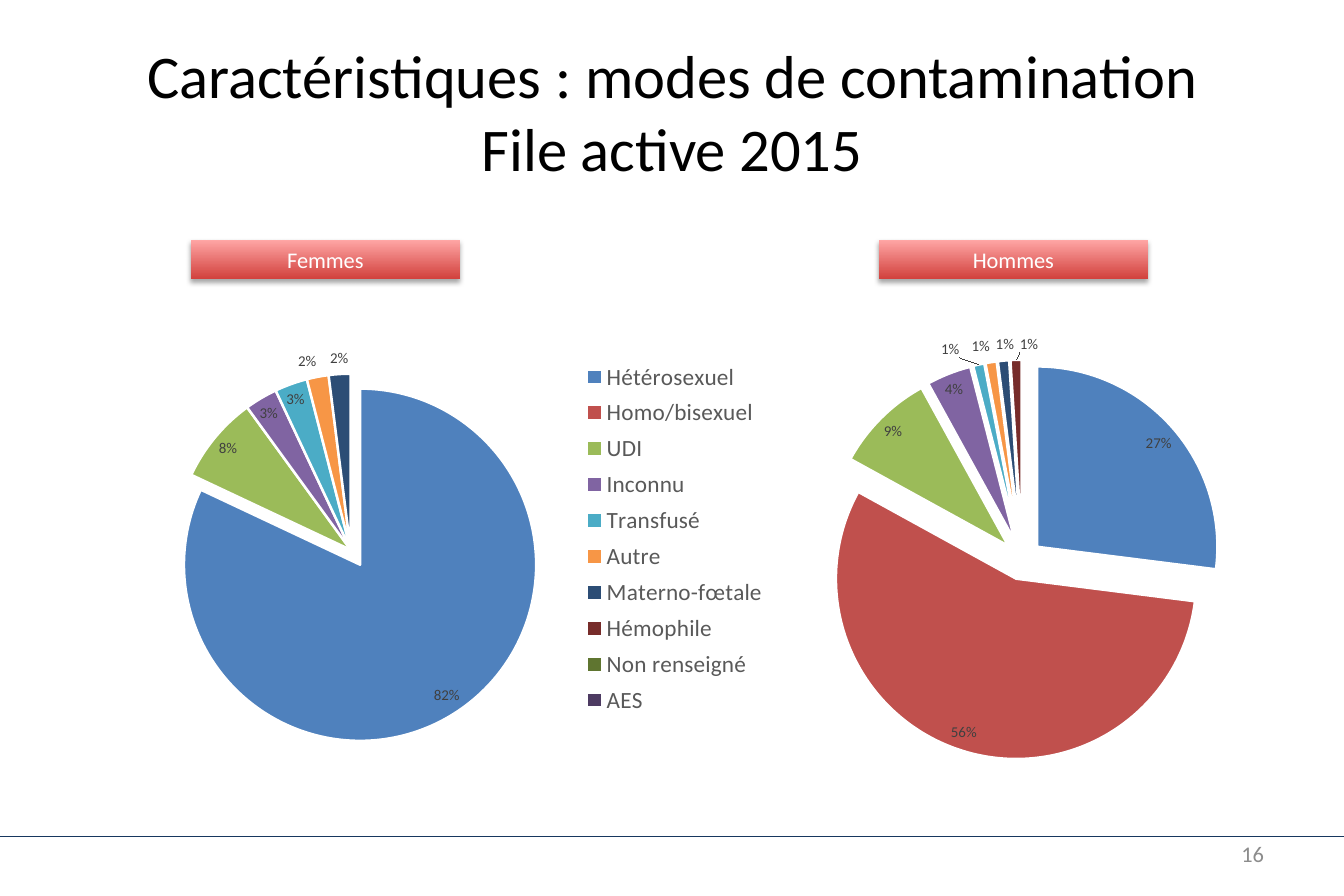
from lxml import etree
from pptx import Presentation
from pptx.chart.data import CategoryChartData
from pptx.dml.color import RGBColor
from pptx.enum.chart import XL_CHART_TYPE as ChartType, XL_LABEL_POSITION as LabelPos, XL_LEGEND_POSITION as LegendPos
from pptx.enum.shapes import MSO_CONNECTOR as Connector, MSO_SHAPE as Shape
from pptx.enum.text import MSO_ANCHOR as Anchor, PP_ALIGN as Align
from pptx.oxml import parse_xml
from pptx.oxml.ns import nsdecls, qn
from pptx.util import Cm, Pt

TITLE = ["Caractéristiques : modes de contamination", "File active 2015"]
PAGE = "16"
MODES = ["Hétérosexuel", "Homo/bisexuel", "UDI", "Inconnu", "Transfusé",
         "Autre", "Materno-fœtale", "Hémophile", "Non renseigné", "AES"]
RANKS = [str(n + 1) for n in range(len(MODES))]
WOMEN = [82, 0, 8, 3, 3, 2, 2, 0, 0, 0]
MEN = [27, 56, 9, 4, 1, 1, 1, 1, 0, 0]
WOMEN_EXPLOSION = [10] + [0] * 9
MEN_EXPLOSION = [11] * 10
BANNERS = [("Femmes", 4.06), ("Hommes", 18.69)]
WOMEN_BOX = (1.19, 6.78, 15.67, 9.73)
MEN_BOX = (15.21, 6.78, 13.06, 9.73)
PLOT_AREA = (0.16, 0.12, 0.48, 0.77)
LEGEND_AREA = (0.7, 0.08, 0.28, 0.8)

FONT = "Calibri"
BLACK = RGBColor(0x00, 0x00, 0x00)
WHITE = RGBColor(0xFF, 0xFF, 0xFF)
GREY = RGBColor(0x8C, 0x8C, 0x8C)
LABEL_GREY = RGBColor(0x40, 0x40, 0x40)
LEGEND_GREY = RGBColor(0x59, 0x59, 0x59)
NAVY = RGBColor(0x17, 0x37, 0x5E)
RED = RGBColor(0xD1, 0x40, 0x3C)
PINK = RGBColor(0xFF, 0xA6, 0xA5)
SLICES = [RGBColor.from_string(c) for c in (
    "4F81BD", "C0504D", "9BBB59", "8064A2", "4BACC6",
    "F79646", "2C4D75", "772C2A", "5F7530", "4D3B62")]


def set_font(font, size, color):
    font.name, font.size = FONT, Pt(size)
    font.color.rgb = color


def write(sp, lines, size=13.5, color=BLACK, align=Align.CENTER):
    tf = sp.text_frame
    tf.word_wrap = True
    tf.vertical_anchor = Anchor.MIDDLE
    for i, line in enumerate(lines):
        p = tf.add_paragraph() if i else tf.paragraphs[0]
        p.alignment = align
        r = p.add_run()
        r.text = line
        set_font(r.font, size, color)


def add_banner(s, text, left):
    sp = s.shapes.add_shape(Shape.RECTANGLE, Cm(left), Cm(5.1), Cm(5.72), Cm(0.84))
    sp.line.fill.background()
    sp.fill.gradient()
    sp.fill.gradient_angle = 90
    for stop, color in zip(sp.fill.gradient_stops, (RED, PINK)):
        stop.color.rgb = color
    sp.shadow.inherit = False
    effects = sp._element.spPr.find(qn("a:effectLst"))
    effects.append(parse_xml(
        f'<a:outerShdw {nsdecls("a")} blurRad="{Pt(3.1)}" dist="{Pt(1.8)}" dir="5400000" rotWithShape="0">'
        '<a:srgbClr val="000000"><a:alpha val="35000"/></a:srgbClr></a:outerShdw>'))
    write(sp, [text], color=WHITE)


def manual_layout(area, target=""):
    modes = "".join(f'<c:{m}Mode val="edge"/>' for m in "xy")
    sizes = "".join(f'<c:{k} val="{v}"/>' for k, v in zip("xywh", area))
    return parse_xml(f'<c:layout {nsdecls("c")}><c:manualLayout>{target}{modes}{sizes}'
                     '</c:manualLayout></c:layout>')


def add_pie(s, box, names, values, explosion):
    data = CategoryChartData()
    data.categories = names
    data.add_series("Series 1", values)
    chart = s.shapes.add_chart(ChartType.PIE, *map(Cm, box), data).chart
    chart.has_title = chart.has_legend = False
    set_font(chart.font, 10, BLACK)
    plot = chart.plots[0]
    plot.vary_by_categories = True
    series = plot.series[0]
    for i, color in enumerate(SLICES):
        fmt = series.points[i].format
        fmt.fill.solid()
        fmt.fill.fore_color.rgb = color
        fmt.line.color.rgb = WHITE
        fmt.line.width = Pt(1.5)
    for point, amount in zip(series._element.findall(qn("c:dPt")), explosion):
        if amount:
            node = etree.Element(qn("c:explosion"), val=str(amount))
            point.find(qn("c:spPr")).addprevious(node)
    labels = series.data_labels
    labels.show_percentage, labels.show_value = True, False
    labels.number_format, labels.number_format_is_linked = "0%", False
    labels.position = LabelPos.BEST_FIT
    set_font(labels.font, 9, LABEL_GREY)
    return chart


def arrange_women(chart):
    chart.has_legend = True
    legend = chart.legend
    legend.position = LegendPos.RIGHT
    legend.include_in_layout = False
    set_font(legend.font, 14, LEGEND_GREY)
    for old in legend._element.findall(qn("c:layout")):
        legend._element.remove(old)
    legend._element.find(qn("c:legendPos")).addnext(manual_layout(LEGEND_AREA))
    area = chart._chartSpace.chart.plotArea
    for old in area.findall(qn("c:layout")):
        area.remove(old)
    area.insert(0, manual_layout(PLOT_AREA, '<c:layoutTarget val="inner"/>'))
    labels = chart.plots[0].series[0].data_labels._element
    flags = "".join(f'<c:show{n} val="{int(n == "Percent")}"/>' for n in (
        "LegendKey", "Val", "CatName", "SerName", "Percent", "BubbleSize"))
    raised = ('<c:layout><c:manualLayout><c:x val="-0.02"/><c:y val="-0.05"/>'
              f'</c:manualLayout></c:layout><c:dLblPos val="bestFit"/>{flags}')
    for i, (idx, body) in enumerate([(7, '<c:delete val="1"/>'), (8, raised)]):
        labels.insert(i, parse_xml(f'<c:dLbl {nsdecls("c")}><c:idx val="{idx}"/>{body}</c:dLbl>'))


def main():
    prs = Presentation()
    prs.slide_width, prs.slide_height = Cm(28.58), Cm(19.05)
    s = prs.slides.add_slide(prs.slide_layouts[6])

    line = s.shapes.add_connector(Connector.STRAIGHT, 0, Cm(17.78), prs.slide_width, Cm(17.78))
    line.line.color.rgb = NAVY
    line.line.width = Pt(0.25)
    etree.SubElement(line._element.spPr, qn("a:effectLst"))

    write(s.shapes.add_textbox(Cm(1.43), Cm(0.76), Cm(25.72), Cm(3.18)), TITLE, size=36.5)
    for text, left in BANNERS:
        add_banner(s, text, left)
    write(s.shapes.add_textbox(Cm(20.48), Cm(17.65), Cm(6.65), Cm(1.01)), [PAGE],
          color=GREY, align=Align.RIGHT)

    add_pie(s, MEN_BOX, RANKS, MEN, MEN_EXPLOSION)
    arrange_women(add_pie(s, WOMEN_BOX, MODES, WOMEN, WOMEN_EXPLOSION))
    prs.save("out.pptx")


if __name__ == "__main__":
    main()
